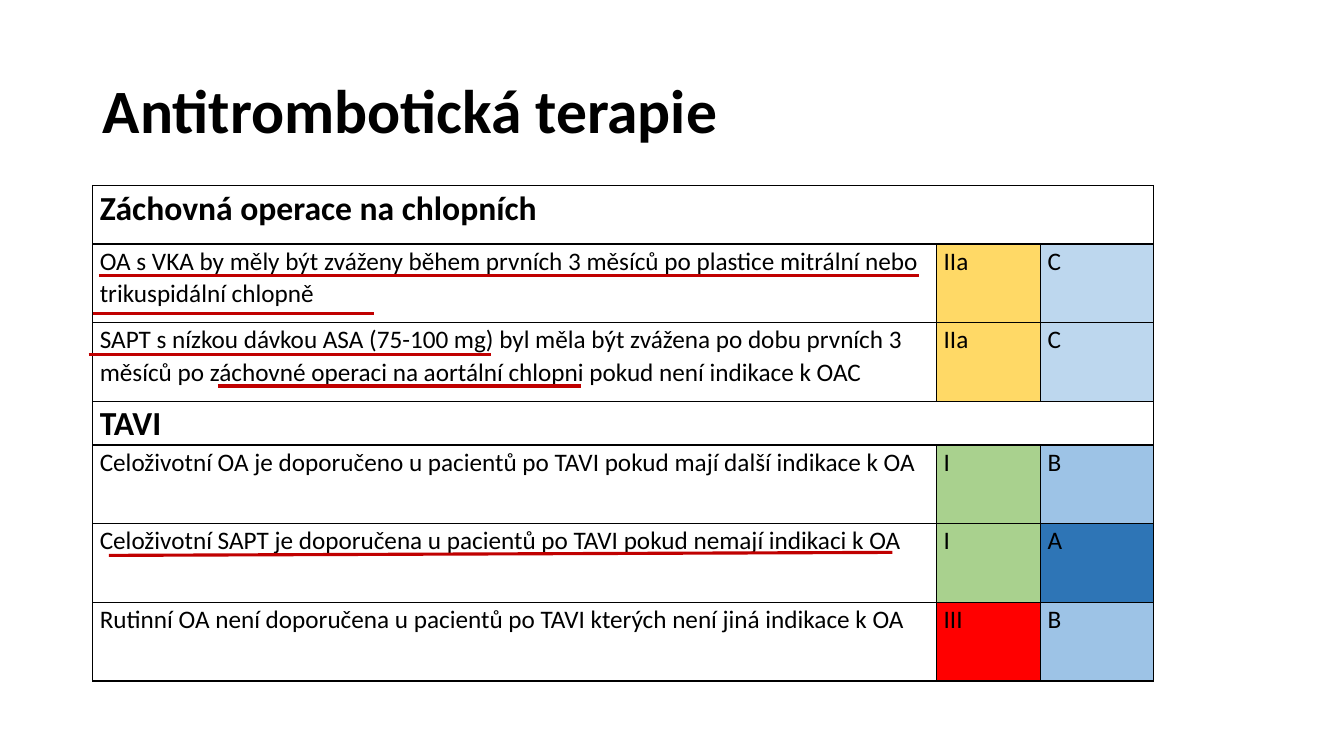
from lxml import etree
from pptx import Presentation
from pptx.dml.color import RGBColor
from pptx.enum.shapes import MSO_CONNECTOR
from pptx.enum.text import MSO_ANCHOR, MSO_AUTO_SIZE, PP_ALIGN
from pptx.oxml.ns import qn
from pptx.util import Inches, Pt

STRAIGHT = MSO_CONNECTOR.STRAIGHT
MIDDLE, TOP = MSO_ANCHOR.MIDDLE, MSO_ANCHOR.TOP
NO_AUTOFIT = MSO_AUTO_SIZE.NONE
LEFT = PP_ALIGN.LEFT
TITLE_ONLY = 5

CLASS_FILLS = {"I": "A9D18E", "IIa": "FFD966", "III": "FF0000"}
EVIDENCE_FILLS = {"A": "2E75B6", "B": "9DC3E6", "C": "BDD7EE"}

COLUMN_WIDTHS = [8.37, 1.03, 1.12]
RECOMMENDATIONS = [
    (0.58, "Záchovná operace na chlopních"),
    (0.78, "OA s VKA by měly být zváženy během prvních 3 měsíců po plastice "
           "mitrální nebo trikuspidální chlopně", "IIa", "C"),
    (0.78, "SAPT s nízkou dávkou ASA (75-100 mg) byl měla být zvážena po dobu prvních 3 "
           "měsíců po záchovné operaci na aortální chlopni pokud není indikace k OAC", "IIa", "C"),
    (0.38, "TAVI"),
    (0.78, "Celoživotní OA je doporučeno u pacientů po TAVI pokud mají další indikace k OA", "I", "B"),
    (0.78, "Celoživotní SAPT je doporučena u pacientů po TAVI pokud nemají indikaci k OA", "I", "A"),
    (0.78, "Rutinní OA není doporučena u pacientů po TAVI kterých není jiná indikace k OA", "III", "B"),
]
UNDERLINES = [
    (0.98, 2.73, 9.11, 2.73),
    (0.92, 3.11, 3.71, 3.11),
    (0.88, 3.52, 4.87, 3.52),
    (2.16, 3.83, 5.76, 3.83),
    (1.08, 5.51, 8.85, 5.48),
]


def rgb(value):
    return RGBColor.from_string(value)


def write(frame, text, size=18, bold=False, color="000000", font="Calibri", spacing=1.07):
    paragraph = frame.paragraphs[0]
    paragraph.alignment = LEFT
    paragraph.line_spacing = spacing
    run = paragraph.add_run()
    run.text = text
    run.font.name = font
    run.font.size = Pt(size)
    run.font.bold = bold
    run.font.color.rgb = rgb(color)


class GuidelineSlide:
    ink = "000000"
    paper = "FFFFFF"
    accent = "C00000"

    def __init__(self, presentation):
        self.slide = presentation.slides.add_slide(presentation.slide_layouts[TITLE_ONLY])

    def title(self, text, left, top, width, height):
        heading = self.slide.shapes.title
        heading.left, heading.top = Inches(left), Inches(top)
        heading.width, heading.height = Inches(width), Inches(height)
        frame = heading.text_frame
        frame.auto_size = NO_AUTOFIT
        frame.word_wrap = True
        frame.vertical_anchor = MIDDLE
        write(frame, text, size=44, bold=True, color=self.ink, spacing=0.9)

    def border(self, cell):
        properties = cell._tc.get_or_add_tcPr()
        for side in ("lnL", "lnR", "lnT", "lnB"):
            edge = etree.SubElement(properties, qn(f"a:{side}"), w=str(Pt(1)))
            fill = etree.SubElement(edge, qn("a:solidFill"))
            etree.SubElement(fill, qn("a:srgbClr"), val=self.ink)

    def style_cell(self, cell, fill):
        cell.margin_left = cell.margin_right = Inches(0.07)
        cell.margin_top = cell.margin_bottom = 0
        cell.vertical_anchor = TOP
        self.border(cell)
        cell.fill.solid()
        cell.fill.fore_color.rgb = rgb(fill)

    def table(self, rows, widths, left, top):
        height = sum(row[0] for row in rows)
        grid = self.slide.shapes.add_table(
            len(rows), len(widths), Inches(left), Inches(top), Inches(sum(widths)), Inches(height)
        ).table
        grid.first_row = grid.horz_banding = False
        for column, width in zip(grid.columns, widths):
            column.width = Inches(width)
        for index, (row_height, *texts) in enumerate(rows):
            grid.rows[index].height = Inches(row_height)
            cells = list(grid.rows[index].cells)
            is_section = len(texts) == 1
            fills = [self.paper] * len(widths)
            if is_section:
                cells[0].merge(cells[-1])
            else:
                fills[1:] = CLASS_FILLS[texts[1]], EVIDENCE_FILLS[texts[2]]
            for cell, fill in zip(cells, fills):
                self.style_cell(cell, fill)
            for cell, text in zip(cells, texts):
                write(cell.text_frame, text, size=24 if is_section else 18,
                      bold=is_section, color=self.ink)

    def underline(self, *ends):
        stroke = self.slide.shapes.add_connector(STRAIGHT, *map(Inches, ends))
        stroke.line.color.rgb = rgb(self.accent)
        stroke.line.width = Pt(2.25)
        etree.SubElement(stroke._element.spPr, qn("a:effectLst"))


def main():
    presentation = Presentation()
    presentation.slide_width, presentation.slide_height = Inches(13.33), Inches(7.5)
    guideline = GuidelineSlide(presentation)
    guideline.title("Antitrombotická terapie", 0.92, 0.4, 11.5, 1.45)
    guideline.table(RECOMMENDATIONS, COLUMN_WIDTHS, 0.92, 1.84)
    for ends in UNDERLINES:
        guideline.underline(*ends)
    presentation.save("out.pptx")


if __name__ == "__main__":
    main()
